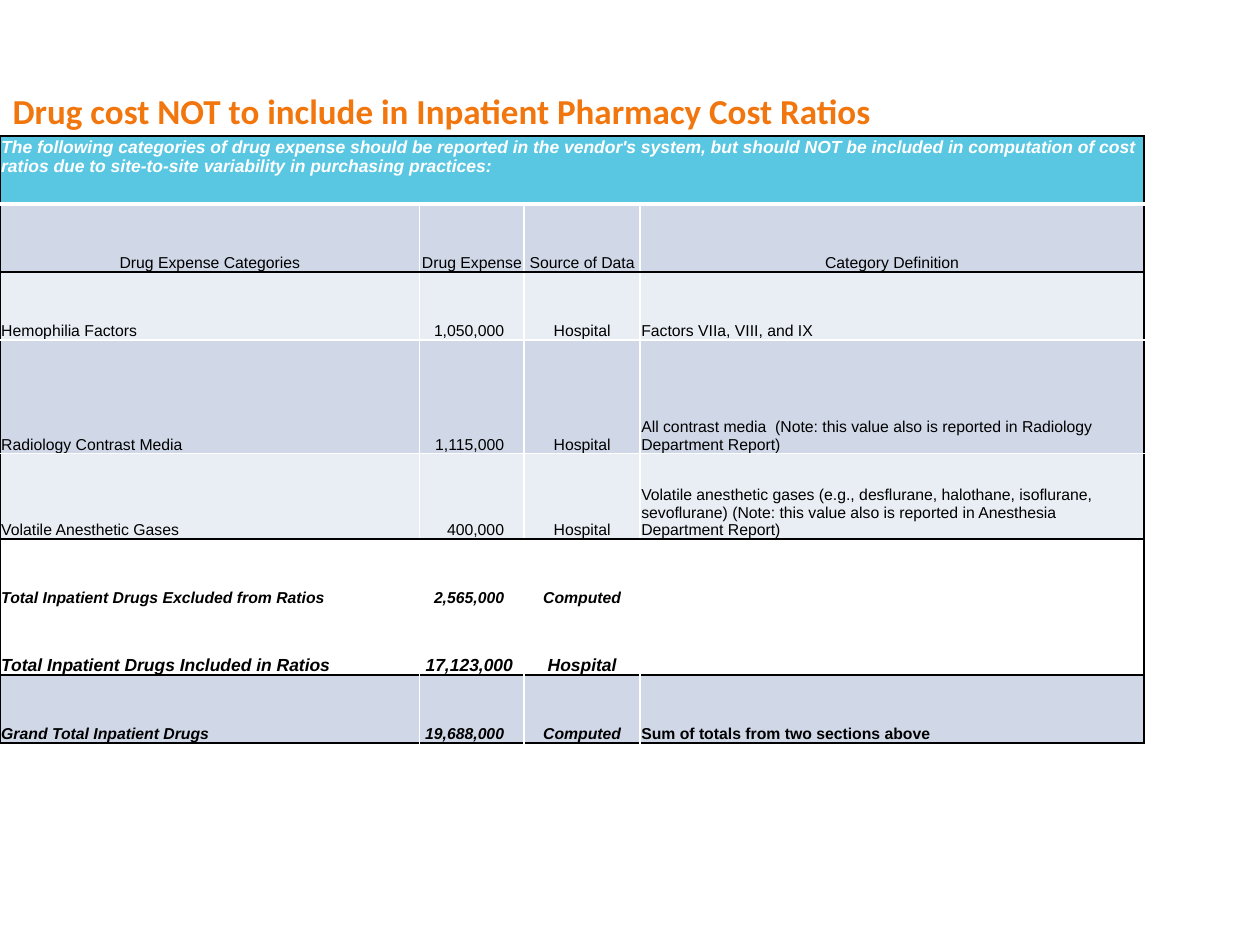
import pptx
import pptx.util
import pptx.dml.color
import pptx.enum.text
import pptx.oxml
import pptx.oxml.ns

Inches = pptx.util.Inches
Pt = pptx.util.Pt
RGB = pptx.dml.color.RGBColor.from_string
ALIGN = pptx.enum.text.PP_ALIGN
ANCHOR = pptx.enum.text.MSO_ANCHOR
COLORS = {"orange": "F2760E", "cyan": "59C7E2", "dark": "D0D8E8",
          "light": "E9EDF4", "white": "FFFFFF", "black": "000000"}


def style(para, size, color, bold, italic, face):
    for run in para.runs:
        font = run.font
        font.name, font.size = face, Pt(size)
        font.bold, font.italic = bold, italic
        font.color.rgb = RGB(COLORS[color])


def border(cell, side, line):
    ns = pptx.oxml.ns.nsdecls("a")
    if line:
        color, width = line
        xml = (f'<a:ln{side} {ns} w="{Pt(width)}"><a:solidFill>'
               f'<a:srgbClr val="{COLORS[color]}"/></a:solidFill></a:ln{side}>')
    else:
        xml = f'<a:ln{side} {ns} w="0"><a:noFill/></a:ln{side}>'
    cell._tc.get_or_add_tcPr().append(pptx.oxml.parse_xml(xml))


deck = pptx.Presentation()
deck.slide_width, deck.slide_height = Inches(10), Inches(7.5)
slide = deck.slides.add_slide(deck.slide_layouts[5])

title = slide.shapes.title
title.left, title.top = Inches(0), Inches(0.25)
title.width, title.height = Inches(9.83), Inches(1.25)
title.text_frame.text = "Drug cost NOT to include in Inpatient Pharmacy Cost Ratios"
title.text_frame.vertical_anchor = ANCHOR.MIDDLE
head = title.text_frame.paragraphs[0]
head.alignment = ALIGN.LEFT
style(head, 20, "orange", True, False, "Calibri")

rows = [
    ["The following categories of drug expense should be reported in the vendor's system, "
     "but should NOT be included in computation of cost ratios due to site-to-site "
     "variability in purchasing practices:", "", "", ""],
    ["Drug Expense Categories", "Drug Expense", "Source of Data", "Category Definition"],
    ["Hemophilia Factors", "1,050,000", "Hospital", "Factors VIIa, VIII, and IX"],
    ["Radiology Contrast Media", "1,115,000", "Hospital",
     "All contrast media  (Note: this value also is reported in Radiology Department Report)"],
    ["Volatile Anesthetic Gases", "400,000", "Hospital",
     "Volatile anesthetic gases (e.g., desflurane, halothane, isoflurane, sevoflurane) "
     "(Note: this value also is reported in Anesthesia Department Report)"],
    ["Total Inpatient Drugs Excluded from Ratios", "2,565,000", "Computed", ""],
    ["Total Inpatient Drugs Included in Ratios", "17,123,000", "Hospital", ""],
    ["Grand Total Inpatient Drugs", "19,688,000", "Computed",
     "Sum of totals from two sections above"],
]
widths = [3.33, 0.83, 0.92, 4]
heights = [0.54, 0.54, 0.54, 0.9, 0.68, 0.54, 0.54, 0.54]
fills = ["cyan", "dark", "light", "dark", "light", None, None, "dark"]
aligns = [ALIGN.LEFT, ALIGN.RIGHT, ALIGN.CENTER, ALIGN.LEFT]
black, white, thick = ("black", 1), ("white", 1), ("white", 3)
rules = [black, thick, black, white, white, black, None, black, black]

frame = slide.shapes.add_table(len(rows), len(widths), Inches(0), Inches(1.08),
                               Inches(sum(widths)), Inches(sum(heights)))
table = frame.table
table.first_row = table.horz_banding = False
for col, width in zip(table.columns, widths):
    col.width = Inches(width)
for row, height in zip(table.rows, heights):
    row.height = Inches(height)
table.cell(0, 0).merge(table.cell(0, 3))

for r, texts in enumerate(rows):
    inner = white if fills[r] else None
    size = 10 if r in (0, 6) else 9
    bold = r == 0 or r >= 5
    for c, text in enumerate(texts):
        cell = table.cell(r, c)
        border(cell, "L", black if c == 0 else inner)
        border(cell, "R", black if c == 3 or r == 0 else inner)
        border(cell, "T", rules[r])
        border(cell, "B", rules[r + 1])
        if fills[r]:
            cell.fill.solid()
            cell.fill.fore_color.rgb = RGB(COLORS[fills[r]])
        else:
            cell.fill.background()
        cell.margin_left = cell.margin_right = cell.margin_top = Inches(0.01)
        cell.margin_bottom = Inches(0)
        cell.vertical_anchor = ANCHOR.BOTTOM if r else ANCHOR.TOP
        if not text:
            continue
        cell.text_frame.text = text
        para = cell.text_frame.paragraphs[0]
        para.alignment = ALIGN.CENTER if r == 1 else aligns[c]
        if c == 1 and r > 1:
            cell.margin_right = Inches(0.09 if r == 6 else 0.16)
        style(para, size, "black" if r else "white", bold, bold and c < 3, "Arial")

deck.save("out.pptx")
